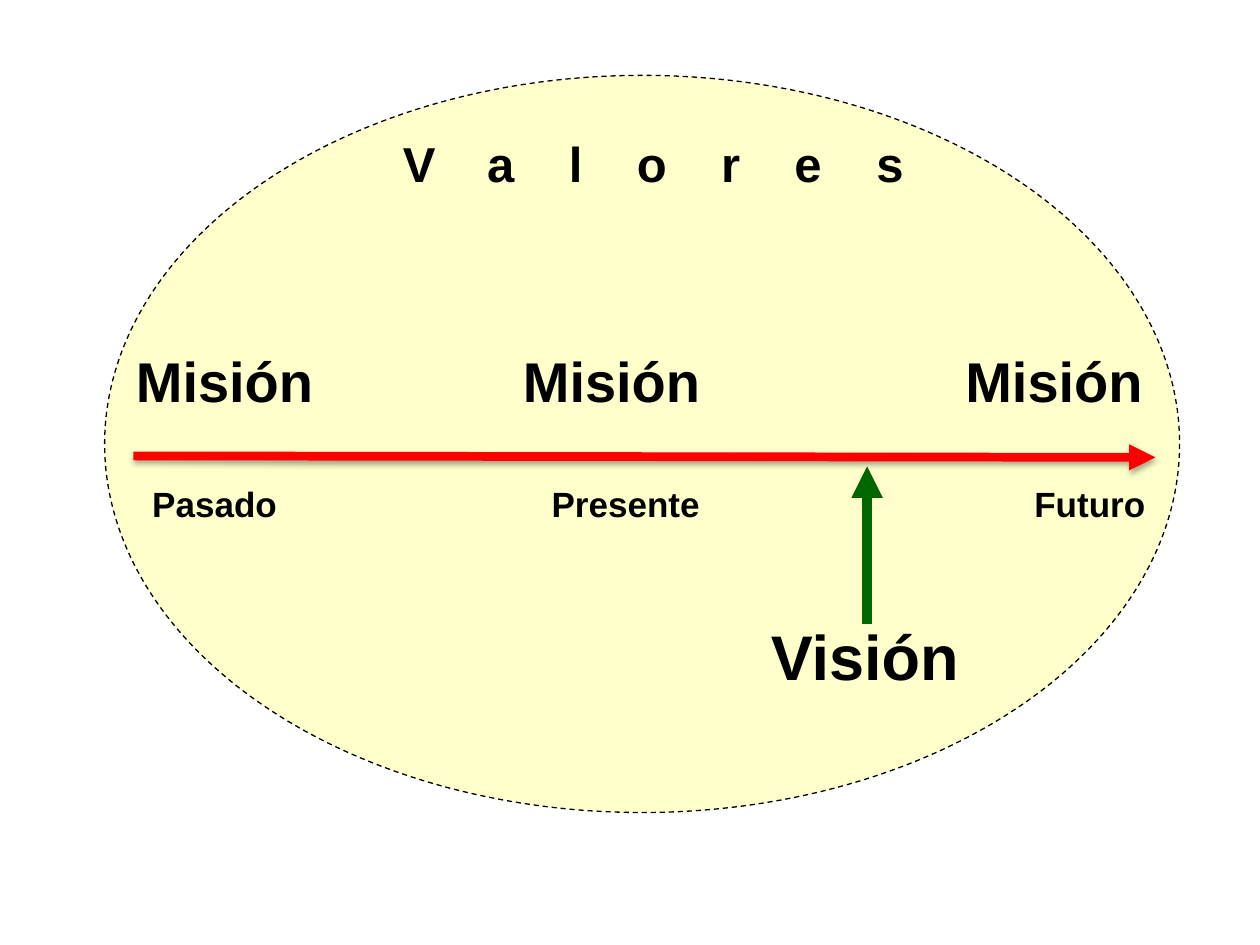
from lxml.etree import SubElement
from pptx import Presentation
from pptx.dml.color import RGBColor
from pptx.enum.dml import MSO_LINE
from pptx.enum.shapes import MSO_CONNECTOR, MSO_SHAPE
from pptx.enum.text import PP_ALIGN as Align
from pptx.oxml.ns import qn
from pptx.util import Cm, Pt

BLACK = RGBColor(0x00, 0x00, 0x00)
CREAM = RGBColor(0xFF, 0xFF, 0xCC)
GREEN = RGBColor(0x00, 0x66, 0x00)
RED = RGBColor(0xFF, 0x00, 0x00)

prs = Presentation()
prs.slide_width, prs.slide_height = Cm(25.4), Cm(19.05)
slide = prs.slides.add_slide(prs.slide_layouts[6])


def add_label(parts, left, top, width, height, size, align=Align.LEFT):
    label = slide.shapes.add_textbox(Cm(left), Cm(top), Cm(width), Cm(height))
    label.text_frame.word_wrap = True
    paragraph = label.text_frame.paragraphs[0]
    paragraph.alignment = align
    for part in parts:
        run = paragraph.add_run()
        run.text = part
        run.font.name = "Arial"
        run.font.size = Pt(size)
        run.font.bold = True
        run.font.color.rgb = BLACK
    return label


def add_arrow(x1, y1, x2, y2, color, width):
    """Draw an arrow and return its effect list."""
    arrow = slide.shapes.add_connector(
        MSO_CONNECTOR.STRAIGHT, Cm(x1), Cm(y1), Cm(x2), Cm(y2))
    arrow.line.color.rgb = color
    arrow.line.width = Pt(width)
    properties = arrow.element.spPr
    SubElement(properties.find(qn("a:ln")), qn("a:tailEnd"), type="triangle")
    return SubElement(properties, qn("a:effectLst"))


# Values: the oval that surrounds everything
oval = slide.shapes.add_shape(
    MSO_SHAPE.OVAL, Cm(2.11), Cm(1.52), Cm(21.67), Cm(14.86))
oval.shadow.inherit = False
oval.fill.solid()
oval.fill.fore_color.rgb = CREAM
oval.line.color.rgb = BLACK
oval.line.width = Pt(0.75)
oval.line.dash_style = MSO_LINE.DASH

# Title, widely spaced up to its last letter
values = add_label(["Valore", "s"], 6.5, 2.57, 13.34, 1.27, 28, Align.CENTER)
values.text_frame.paragraphs[0].runs[0].font._element.set("spc", "3110")

# Vision and its arrow up to the timeline
add_label(["Visión"], 15.29, 12.32, 4.45, 1.65, 36)
add_arrow(17.48, 12.57, 17.48, 9.4, GREEN, 6)

# Periods, spread along the timeline with tab stops
periods = add_label(["Pasado\tPresente\tFuturo"], 1.9, 9.6, 22.4, 1.78, 20)
periods.text_frame.margin_left = Cm(1.17)
tabs = SubElement(
    periods.text_frame.paragraphs[0]._p.get_or_add_pPr(), qn("a:tabLst"))
for position, side in ((8.05, "l"), (20.02, "r")):
    SubElement(tabs, qn("a:tab"), pos=str(Cm(position)), algn=side)

# Timeline with a soft shadow below
effects = add_arrow(2.69, 9.19, 23.29, 9.22, RED, 5)
shadow = SubElement(
    effects, qn("a:outerShdw"), blurRad=str(Pt(3.1)), dist=str(Pt(1.8)),
    dir="5400000", rotWithShape="0")
shade = SubElement(shadow, qn("a:srgbClr"), val=str(BLACK))
SubElement(shade, qn("a:alpha"), val="35000")

# Mission in each period
for left in (9.98, 2.18, 18.9):
    add_label(["Misión"], left, 6.86, 4.7, 1.32, 32, Align.CENTER)

prs.save("out.pptx")
